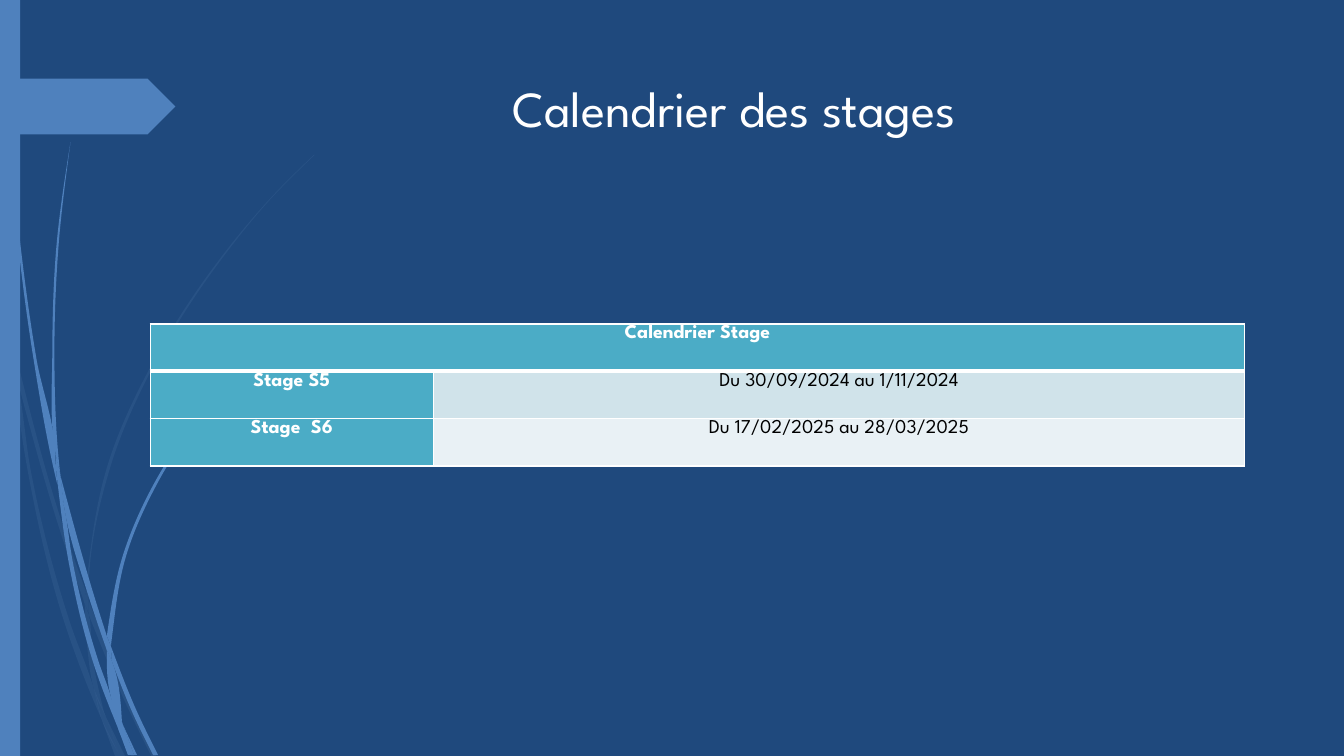
"""Build the internship calendar slide."""
import math
from dataclasses import dataclass

from lxml import etree
from pptx import Presentation
from pptx.dml.color import RGBColor
from pptx.enum import shapes, text
from pptx.oxml import ns
from pptx.util import Pt


@dataclass(frozen=True)
class Theme:
    """Colours, font and type sizes of the slide."""
    background: str = "1F497D"
    accent: str = "4F81BD"
    faint: str = "376092"
    faint_opacity: int = 40
    white: str = "FFFFFF"
    black: str = "000000"
    heading_fill: str = "4BACC6"
    band_fills: tuple = ("D0E3EA", "E9F1F5")
    font: str = "League Spartan"
    title_size: int = 36
    table_size: int = 14


@dataclass(frozen=True)
class Box:
    """A region of the slide, in points."""
    left: float
    top: float
    width: float
    height: float

    def lengths(self):
        """Return the four lengths for a shape call."""
        return Pt(self.left), Pt(self.top), Pt(self.width), Pt(self.height)


THEME = Theme()
SLIDE = Box(0, 0, 960, 540)
TITLE = Box(173.5, 51.4, 702, 101)
TABLE = Box(107.3, 231.4, 781.9, 101.5)
BAR = Box(0, 0, 14.4, 540)
ARROW = Box(0, 56.2, 125.3, 39.8)

FAINT_BLADES = [
    ([(7.9, 252), (6.5, 231.8), (0, 203)], [(0, 215.3), (7.2, 247.7), (7.9, 252)]),
    ([(10.1, 248.4), (44.6, 374.4), (61.2, 421.9)], [(60.5, 431.3), (41.8, 375.8), (12.2, 270.7)]),
    ([(63.4, 429.1), (91.4, 498.2), (111.6, 540)], [(108, 540), (88.6, 499.7), (63.4, 439.2)]),
    ([(75.6, 511.9), (89.3, 540)], [(85.7, 540), (75.6, 511.9)]),
    ([(7.9, 252), (12.2, 270.7), (22.3, 337.7), (50.4, 445.7), (67, 491.8), (72.7, 514.1)],
     [(72.7, 514.1), (66.2, 499), (46.8, 447.1), (20.2, 338.4), (7.9, 252)]),
    ([(60.5, 431.3), (62.6, 465.1), (67, 491.8), (69.1, 498.2), (75.6, 511.9)],
     [(74.2, 508.3), (65.5, 465.1), (63.4, 439.2), (60.5, 431.3)]),
    ([(224.6, 110.2), (193, 141.8), (164.2, 175.7), (113.8, 250.6), (77, 331.9), (61.2, 421.9)],
     [(63.4, 429.1), (63.4, 420.5), (79.2, 332.6), (115.2, 251.3), (164.9, 176.4), (193, 142.6),
      (224.6, 110.9)]),
    ([(72.7, 514.1), (82.1, 540)], [(85.7, 540), (72.7, 514.1)]),
    ([(63.4, 437.8), (63.4, 429.1)], [(61.2, 421.9), (60.5, 431.3)]),
    ([(67, 491.8), (72.7, 514.1), (85.7, 540)], [(85.7, 540), (75.6, 511.9), (67, 491.8)]),
]
BRIGHT_BLADES = [
    ([(2.2, 0), (5, 79.2), (12.2, 167.8), (23.8, 255.6), (40.3, 343.4), (41, 346.3)],
     [(39.6, 329), (39.6, 326.2), (25.9, 255.6), (13.7, 167), (5.8, 78.5), (2.9, 0)]),
    ([(43.2, 339.8), (67, 424.8), (76.3, 454.3)], [(76.3, 464.4), (63.4, 426.2), (46.1, 363.6), (43.2, 339.8)]),
    ([(79.2, 461.5), (97.9, 508.3), (113, 539.3)], [(109.4, 539.3), (95, 509.8), (79.9, 472.3)]),
    ([(41, 343.4), (46.1, 363.6), (51.8, 400.3), (70.6, 473), (79.2, 497.5), (84.2, 519.8)],
     [(84.2, 519.8), (67, 474.5), (49, 401), (41, 343.4)]),
    ([(50.4, 101.5), (40.3, 176.4), (37.4, 251.3), (39.6, 323.3), (43.2, 339.8)],
     [(43.2, 339.8), (41.8, 326.2), (38.9, 251.3), (41.8, 176.4), (50.4, 101.5)]),
    ([(87.8, 517.7), (95.8, 539.3)], [(97.9, 539.3), (87.8, 517.7)]),
    ([(39.6, 323.3), (41, 343.4), (46.1, 363.6)], [(43.2, 339.8), (39.6, 323.3)]),
    ([(187.2, 247.7), (166.3, 268.6), (146.9, 291.6), (112.3, 341.3), (87.8, 396.7), (76.3, 454.3)],
     [(79.2, 461.5), (79.9, 455.8), (90, 397.4), (113.8, 342.7), (147.6, 292.3), (166.3, 269.3),
      (187.9, 247.7)]),
    ([(84.2, 519.8), (91.4, 539.3)], [(94.3, 539.3), (84.2, 519.8)]),
    ([(76.3, 464.4), (79.2, 497.5), (87.8, 517.7)], [(87.1, 515.5), (79.9, 472.3), (76.3, 464.4)]),
    ([(76.3, 464.4), (79.9, 472.3)], [(79.2, 461.5), (76.3, 454.3)]),
    ([(79.2, 497.5), (84.2, 519.8), (93.6, 539.3)], [(95.8, 539.3), (87.8, 517.7), (79.2, 497.5)]),
]
STAGES = [
    ("Stage S5", "Du 30/09/2024 au 1/11/2024"),
    ("Stage  S6", "Du 17/02/2025 au 28/03/2025"),
]


def paint(shape, color, opacity=100):
    """Give a shape a flat fill without line or shadow."""
    shape.shadow.inherit = False
    shape.line.fill.background()
    shape.fill.solid()
    shape.fill.fore_color.rgb = RGBColor.from_string(color)
    if opacity < 100:
        tint = shape.fill._xPr.find(".//" + ns.qn("a:srgbClr"))
        etree.SubElement(tint, ns.qn("a:alpha"), val=str(opacity * 1000))


def write(paragraph, words, size, color, bold=False):
    """Add one centred run to a paragraph."""
    paragraph.alignment = text.PP_ALIGN.CENTER
    run = paragraph.add_run()
    run.text = words
    run.font.name = THEME.font
    run.font.size = Pt(size)
    run.font.bold = bold
    run.font.color.rgb = RGBColor.from_string(color)


def curve_points(knots):
    """Return the Bezier points that follow the first knot of a smooth edge."""
    knots = [complex(*knot) for knot in knots]
    spans = [abs(b - a) for a, b in zip(knots, knots[1:])]
    slopes = [(b - a) / span for a, b, span in zip(knots, knots[1:], spans)]
    inner = [(m * k + n * h) / (h + k)
             for m, n, h, k in zip(slopes, slopes[1:], spans, spans[1:])]
    first = (3 * slopes[0] - inner[0]) / 2 if inner else slopes[0]
    last = (3 * slopes[-1] - inner[-1]) / 2 if inner else slopes[0]
    tangents = [first, *inner, last]
    points = []
    for index, span in enumerate(spans):
        start, end = knots[index:index + 2]
        points += [start + tangents[index] * span / 3,
                   end - tangents[index + 1] * span / 3, end]
    return [(point.real, point.imag) for point in points]


def add_blade(slide, box, edges, color, opacity=100):
    """Draw a blade between two smooth edges."""
    out, back = edges
    outline = [out[0], *curve_points(out)]
    if not math.isclose(math.dist(out[-1], back[0]), 0):
        outline += [out[-1], back[0], back[0]]
    outline += curve_points(back)
    outline = [(Pt(box.left + x), Pt(box.top + y)) for x, y in outline]
    builder = slide.shapes.build_freeform(*outline[0])
    builder.add_line_segments(outline[1:], close=True)
    shape = builder.convert_to_shape()
    lines = list(shape._element.iter(ns.qn("a:lnTo")))
    for first in range(0, len(outline) - 1, 3):
        curve = etree.Element(ns.qn("a:cubicBezTo"))
        lines[first].addprevious(curve)
        for line in lines[first:first + 3]:
            curve.append(line[0])
            line.getparent().remove(line)
    paint(shape, color, opacity)


def add_decoration(slide, box):
    """Draw the grass blades, the side bar and the arrow."""
    for edges in FAINT_BLADES:
        add_blade(slide, box, edges, THEME.faint, THEME.faint_opacity)
    for edges in BRIGHT_BLADES:
        add_blade(slide, box, edges, THEME.accent)
    for kind, part in ((shapes.MSO_SHAPE.RECTANGLE, BAR),
                       (shapes.MSO_SHAPE.PENTAGON, ARROW)):
        placed = Box(box.left + part.left, box.top + part.top, part.width, part.height)
        paint(slide.shapes.add_shape(kind, *placed.lengths()), THEME.accent)


def add_title(slide, box):
    """Place the title in its placeholder."""
    title = slide.shapes.title
    title.left, title.top, title.width, title.height = box.lengths()
    title.text_frame.vertical_anchor = text.MSO_ANCHOR.TOP
    write(title.text_frame.paragraphs[0], "Calendrier des stages", THEME.title_size, THEME.white)


def set_borders(cell, **widths):
    """Draw white borders with the given widths around a cell."""
    properties = cell._tc.get_or_add_tcPr()
    for side in "LRTB":
        line = etree.SubElement(properties, ns.qn("a:ln" + side), w=str(Pt(widths.get(side, 1))))
        fill = etree.SubElement(line, ns.qn("a:solidFill"))
        etree.SubElement(fill, ns.qn("a:srgbClr"), val=THEME.white)


def fill_cell(cell, words, fill, color, bold):
    """Format one cell and write its words."""
    cell.fill.solid()
    cell.fill.fore_color.rgb = RGBColor.from_string(fill)
    cell.margin_left = cell.margin_right = Pt(5)
    cell.margin_top = cell.margin_bottom = 0
    paragraph = cell.text_frame.paragraphs[0]
    paragraph.line_spacing = 1.07
    write(paragraph, words, THEME.table_size, color, bold)


def add_calendar(slide, box):
    """Build the table of internship dates."""
    rows = len(STAGES) + 1
    table = slide.shapes.add_table(rows, 2, *box.lengths()).table
    table.horz_banding = False
    label_width = 202.3
    table.columns[0].width = Pt(label_width)
    table.columns[1].width = Pt(box.width - label_width)
    for index, row in enumerate(table.rows):
        row.height = Pt(box.height / rows)
        heavy = {0: {"B": 3}, 1: {"T": 3}}.get(index, {})
        for cell in row.cells:
            set_borders(cell, **heavy)
    heading = table.cell(0, 0)
    heading.merge(table.cell(0, 1))
    fill_cell(heading, "Calendrier Stage", THEME.heading_fill, THEME.white, True)
    for index, (stage, dates) in enumerate(STAGES):
        label, period = table.rows[index + 1].cells
        fill_cell(label, stage, THEME.heading_fill, THEME.white, True)
        fill_cell(period, dates, THEME.band_fills[index], THEME.black, False)


def main():
    """Create and save the presentation."""
    presentation = Presentation()
    presentation.slide_width, presentation.slide_height = SLIDE.lengths()[2:]
    slide = presentation.slides.add_slide(presentation.slide_layouts[5])
    slide.background.fill.solid()
    slide.background.fill.fore_color.rgb = RGBColor.from_string(THEME.background)
    add_decoration(slide, SLIDE)
    add_title(slide, TITLE)
    add_calendar(slide, TABLE)
    presentation.save("out.pptx")


if __name__ == "__main__":
    main()
